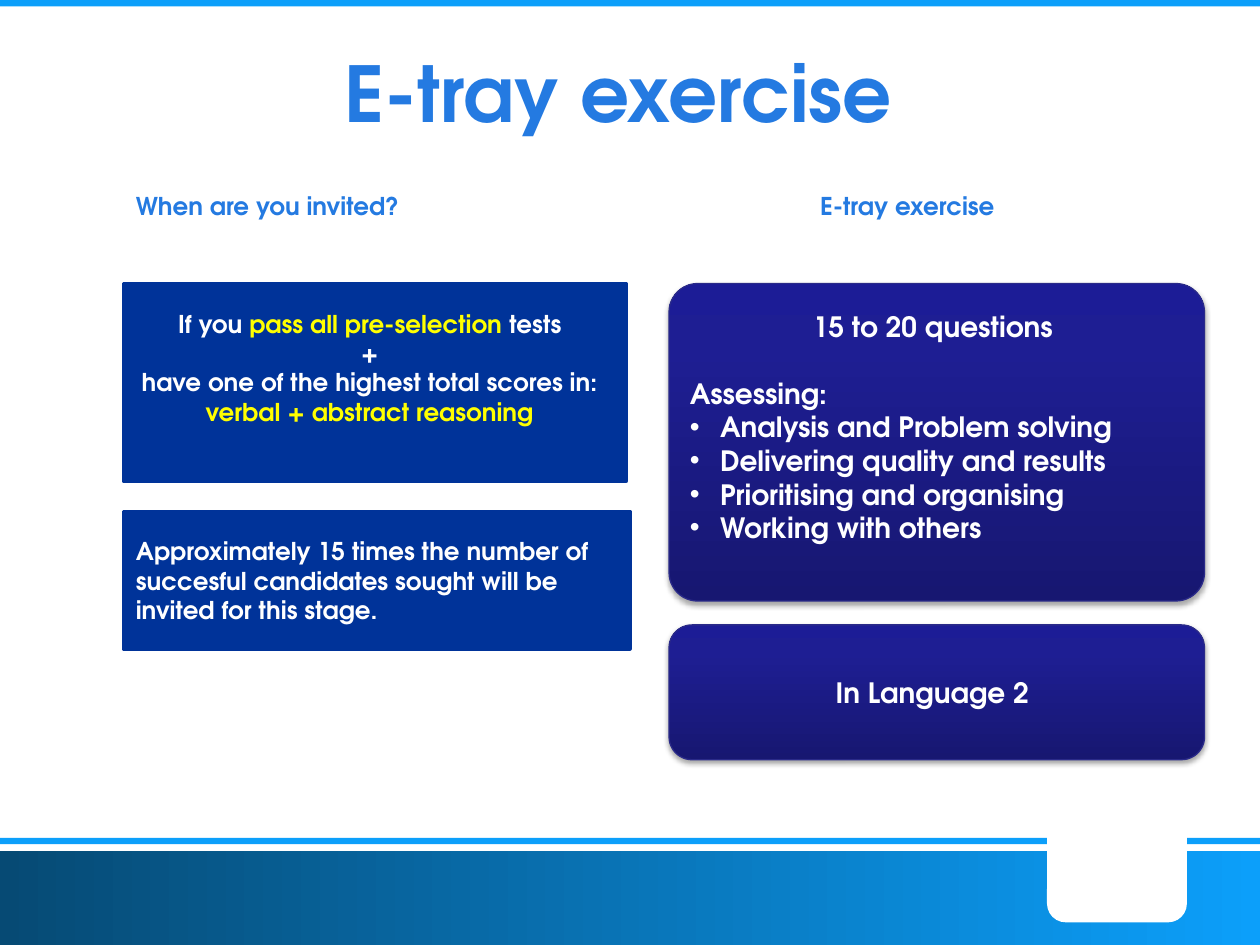
from lxml import etree
from pptx import Presentation
from pptx import util as u
from pptx.dml.color import RGBColor
from pptx.enum import shapes, text
from pptx.oxml.ns import qn

FONT = "TeX Gyre Adventor"
SKY, TITLE_BLUE, NAVY = "0C9FFA", "247AE1", "003399"
WHITE, YELLOW = "FFFFFF", "FFFF00"
FOOTER_STOPS = [(0, "064A74"), (100, SKY)]
PANEL_STOPS = [(0, "171771"), (80, "1E1E93"), (100, "1C1C96")]
LEFT_COLUMN, RIGHT_COLUMN = 0.98, 5.31
CONTENT_TOP, PANEL_WIDTH = 2.25, 4.25
CENTER, LEFT = text.PP_ALIGN.CENTER, text.PP_ALIGN.LEFT
RECT = shapes.MSO_SHAPE.RECTANGLE
ROUNDED = shapes.MSO_SHAPE.ROUNDED_RECTANGLE


def color(value):
    return RGBColor.from_string(value)


def child(parent, tag, **attributes):
    return etree.SubElement(parent, qn(tag), attributes)


def set_gradient(shape, stops, angle):
    """Fill with (percent, colour) stops; the angle runs counter-clockwise."""
    shape.fill.gradient()
    shape.fill.gradient_angle = angle
    stop_list = shape.element.spPr.find(".//" + qn("a:gsLst"))
    stop_list.clear()
    for percent, value in stops:
        stop = child(stop_list, "a:gs", pos=str(percent * 1000))
        child(stop, "a:srgbClr", val=value)


def add_block(slide, kind, box, fill=None, line=None, line_width=1):
    shape = slide.shapes.add_shape(kind, *map(u.Inches, box))
    shape.shadow.inherit = False
    if fill:
        shape.fill.solid()
        shape.fill.fore_color.rgb = color(fill)
    if line:
        shape.line.color.rgb = color(line)
        shape.line.width = u.Pt(line_width)
    else:
        shape.line.fill.background()
    return shape


def add_panel(slide, top, height, corner):
    """Rounded gradient box with a soft shadow in the right column."""
    box = (RIGHT_COLUMN, top, PANEL_WIDTH, height)
    panel = add_block(slide, ROUNDED, box, line="2A2A89", line_width=0.75)
    panel.adjustments[0] = corner
    set_gradient(panel, PANEL_STOPS, 90)
    effects = panel.element.spPr.find(qn("a:effectLst"))
    shadow = child(effects, "a:outerShdw", blurRad=str(u.Pt(3.1)), dist=str(u.Pt(1.8)),
                   dir="5400000", rotWithShape="0")
    shadow_color = child(shadow, "a:srgbClr", val="000000")
    child(shadow_color, "a:alpha", val="35000")
    return panel


def write(shape, lines, size, align=LEFT, anchor=text.MSO_ANCHOR.MIDDLE,
          top_inset=0.05, right_inset=0.1):
    """Each line is a list of (words, colour) runs."""
    frame = shape.text_frame
    frame.word_wrap = True
    frame.vertical_anchor = anchor
    frame.margin_top = u.Inches(top_inset)
    frame.margin_right = u.Inches(right_inset)
    for index, line in enumerate(lines):
        paragraph = frame.add_paragraph() if index else frame.paragraphs[0]
        paragraph.alignment = align
        for words, value in line:
            run = paragraph.add_run()
            run.text = words
            run.font.name = FONT
            run.font.size = u.Pt(size)
            run.font.bold = True
            run.font.color.rgb = color(value)
    return frame.paragraphs


def add_bullet(paragraph):
    indent = u.Inches(0.24)
    properties = paragraph._p.get_or_add_pPr()
    properties.set("marL", str(indent))
    properties.set("indent", str(-indent))
    child(properties, "a:buFont", typeface="Arial")
    child(properties, "a:buChar", char="•")


def add_heading(slide, left, width, words):
    box = slide.shapes.add_textbox(*map(u.Inches, (left, 1.47, width, 0.4)))
    write(box, [[(words, TITLE_BLUE)]], 14, anchor=text.MSO_ANCHOR.TOP)


def add_frame(slide):
    footer = add_block(slide, RECT, (0, 6.75, 10, 0.75))
    set_gradient(footer, FOOTER_STOPS, 0)
    for top in (6.65, 0):
        add_block(slide, RECT, (0, top, 10, 0.05), SKY)
    add_block(slide, ROUNDED, (8.31, 6.43, 1.11, 0.89), WHITE)


def add_title(slide, words):
    title = slide.shapes.title
    title.left, title.top, title.width, title.height = map(u.Inches, (0.78, 0.21, 8.44, 1.04))
    write(title, [[(words, TITLE_BLUE)]], 44, CENTER, right_inset=0.28)


def add_invitation(slide):
    add_heading(slide, LEFT_COLUMN, 3, "When are you invited?")
    condition = add_block(slide, RECT, (LEFT_COLUMN, CONTENT_TOP, 3.99, 1.57), NAVY, NAVY, 2)
    write(condition, [
        [("If you ", WHITE), ("pass all pre-selection ", YELLOW), ("tests", WHITE)],
        [("+", WHITE)],
        [("have one of the highest total scores in:", WHITE)],
        [("verbal + abstract reasoning", YELLOW)],
    ], 14, CENTER, text.MSO_ANCHOR.TOP, top_inset=0.2, right_inset=0.18)
    quota = add_block(slide, RECT, (LEFT_COLUMN, 4.06, 4.02, 1.09), NAVY, NAVY, 2)
    write(quota, [[("Approximately 15 times the number of succesful candidates "
                    "sought will be invited for this stage.", WHITE)]], 14)


def add_exercise(slide):
    add_heading(slide, 6.41, 2.09, "E-tray exercise")
    skills = ["Analysis and Problem solving", "Delivering quality and results",
              "Prioritising and organising", "Working with others"]
    lines = ["15 to 20 questions", "Assessing:"] + skills
    panel = add_panel(slide, CONTENT_TOP, 2.52, 0.09)
    paragraphs = write(panel, [[(line, WHITE)] for line in lines], 16,
                       anchor=text.MSO_ANCHOR.TOP, top_inset=0.14, right_inset=0.16)
    paragraphs[0].alignment = CENTER
    paragraphs[1].space_before = u.Pt(19)
    for paragraph in paragraphs[2:]:
        add_bullet(paragraph)
    language = add_panel(slide, 4.96, 1.07, 0.17)
    write(language, [[("In Language 2", WHITE)]], 16, CENTER, right_inset=0.17)


def main():
    presentation = Presentation()
    presentation.slide_width = u.Inches(10)
    presentation.slide_height = u.Inches(7.5)
    slide = presentation.slides.add_slide(presentation.slide_layouts[5])
    add_frame(slide)
    add_title(slide, "E-tray exercise")
    add_invitation(slide)
    add_exercise(slide)
    presentation.save("out.pptx")


if __name__ == "__main__":
    main()
